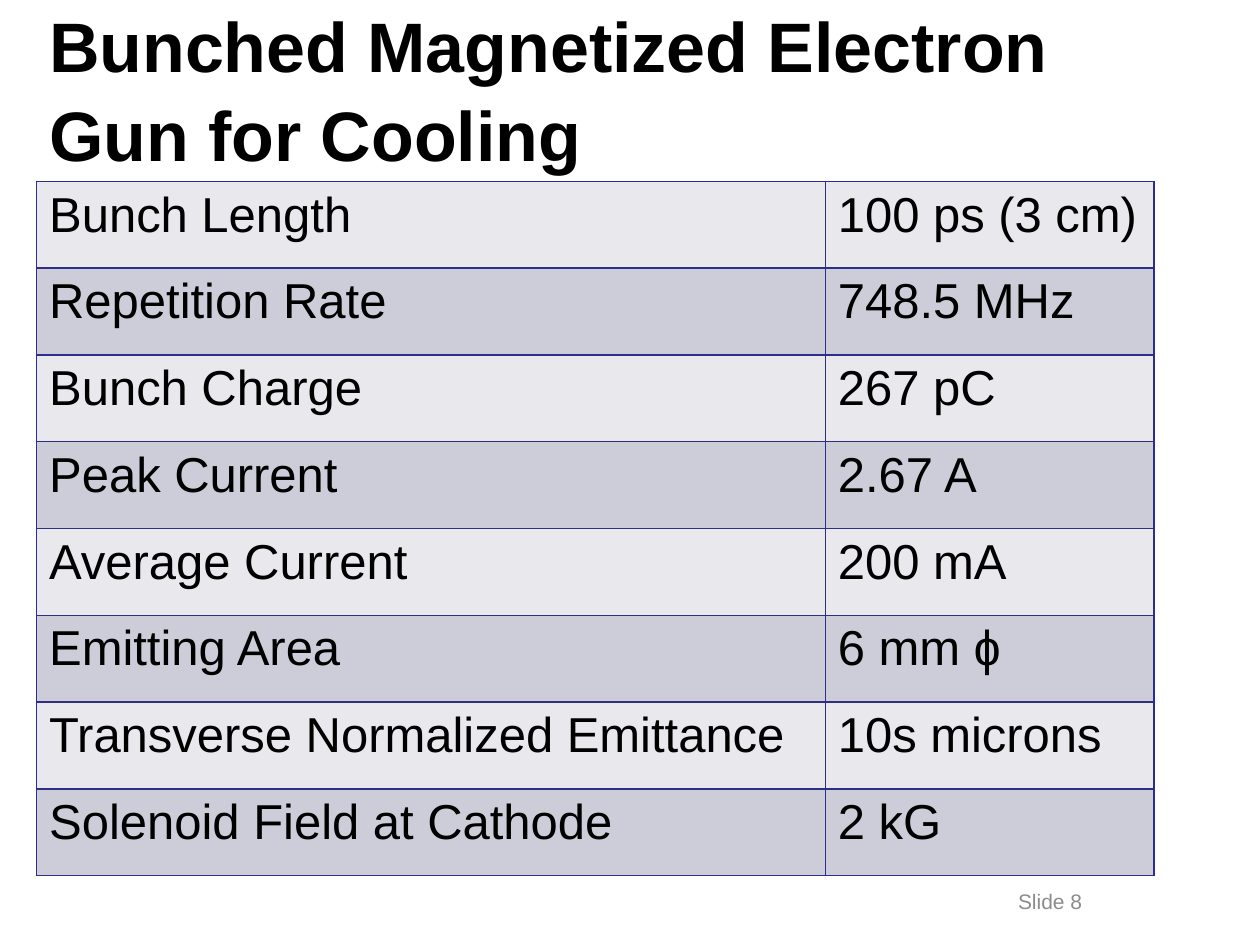
from dataclasses import dataclass

from lxml.etree import fromstring
from pptx import Presentation
from pptx.dml.color import RGBColor
from pptx.enum.text import MSO_ANCHOR, MSO_AUTO_SIZE, PP_ALIGN
from pptx.oxml.ns import nsdecls
from pptx.util import Pt


@dataclass(frozen=True)
class Theme:
    font: str = "Arial"
    text: str = "000000"
    muted: str = "8C8C8C"
    border: str = "2D2D8A"
    bands: tuple = ("E8E8ED", "CDCDDA")
    title_size: int = 40
    table_size: int = 28
    footer_size: int = 12


THEME = Theme()
TITLE_ONLY = 5
COLUMN_WIDTHS = (450.7, 187.9)
ROW_HEIGHT = 49.6
PARAMETERS = (
    ("Bunch Length", "100 ps (3 cm)"),
    ("Repetition Rate", "748.5 MHz"),
    ("Bunch Charge", "267 pC"),
    ("Peak Current", "2.67 A"),
    ("Average Current", "200 mA"),
    ("Emitting Area", "6 mm ɸ"),
    ("Transverse Normalized Emittance", "10s microns"),
    ("Solenoid Field at Cathode", "2 kG"),
)


def write_text(text_frame, text, size, color, bold=False, align=PP_ALIGN.LEFT):
    text_frame.text = text
    text_frame.word_wrap = True
    paragraph = text_frame.paragraphs[0]
    paragraph.alignment = align
    paragraph.font.name = THEME.font
    paragraph.font.size = Pt(size)
    paragraph.font.bold = bold
    paragraph.font.color.rgb = RGBColor.from_string(color)


def add_title(slide, text):
    title = slide.shapes.title
    title.left, title.top, title.width, title.height = Pt(20.9), Pt(0.7), Pt(654.5), Pt(97.9)
    write_text(title.text_frame, text, THEME.title_size, THEME.text, bold=True)
    title.text_frame.auto_size = MSO_AUTO_SIZE.NONE
    title.text_frame.vertical_anchor = MSO_ANCHOR.MIDDLE
    title.text_frame.paragraphs[0].line_spacing = 1.05


def set_borders(cell):
    properties = cell._tc.get_or_add_tcPr()
    for index, side in enumerate(("lnL", "lnR", "lnT", "lnB")):
        properties.insert(index, fromstring(
            f'<a:{side} {nsdecls("a")} w="{Pt(1)}"><a:solidFill>'
            f'<a:srgbClr val="{THEME.border}"/></a:solidFill></a:{side}>'))


def add_parameter_table(slide):
    table = slide.shapes.add_table(
        len(PARAMETERS), len(COLUMN_WIDTHS), Pt(20.9), Pt(103.7),
        Pt(sum(COLUMN_WIDTHS)), Pt(ROW_HEIGHT * len(PARAMETERS))).table
    table.first_row = table.horz_banding = False
    for column, width in zip(table.columns, COLUMN_WIDTHS):
        column.width = Pt(width)
    for index, (row, values) in enumerate(zip(table.rows, PARAMETERS)):
        row.height = Pt(ROW_HEIGHT)
        for cell, value in zip(row.cells, values):
            write_text(cell.text_frame, value, THEME.table_size, THEME.text)
            cell.fill.solid()
            cell.fill.fore_color.rgb = RGBColor.from_string(THEME.bands[index % 2])
            set_borders(cell)


def add_slide_number(slide, text):
    box = slide.shapes.add_textbox(Pt(516.2), Pt(500.4), Pt(167.8), Pt(28.8))
    write_text(box.text_frame, text, THEME.footer_size, THEME.muted, align=PP_ALIGN.CENTER)
    box.text_frame.vertical_anchor = MSO_ANCHOR.MIDDLE


def main():
    presentation = Presentation()
    presentation.slide_width, presentation.slide_height = Pt(720), Pt(540)
    slide = presentation.slides.add_slide(presentation.slide_layouts[TITLE_ONLY])
    add_title(slide, "Bunched Magnetized Electron Gun for Cooling")
    add_parameter_table(slide)
    add_slide_number(slide, "Slide 8")
    presentation.save("out.pptx")


if __name__ == "__main__":
    main()
